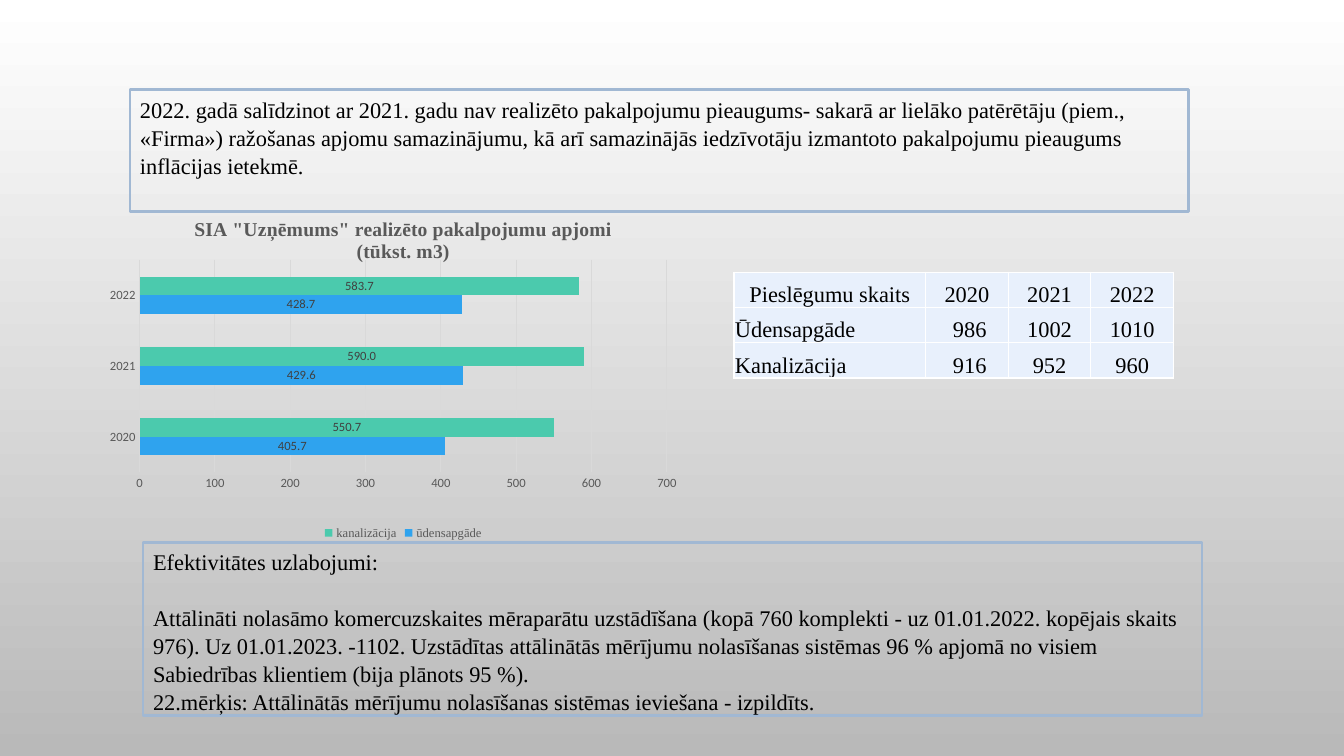
from lxml.etree import SubElement
from pptx import Presentation
from pptx.chart.data import CategoryChartData
from pptx.dml.color import RGBColor
from pptx.enum.chart import XL_CHART_TYPE as ChartType
from pptx.enum.chart import XL_LABEL_POSITION as LabelPosition
from pptx.enum.chart import XL_LEGEND_POSITION as LegendPosition
from pptx.enum.chart import XL_TICK_MARK as TickMark
from pptx.enum.text import MSO_ANCHOR as Anchor
from pptx.enum.text import PP_ALIGN as Align
from pptx.oxml import parse_xml
from pptx.oxml.ns import nsdecls, qn
from pptx.util import Inches, Pt

SERIF, SANS = "Times New Roman", "Calibri"
BLACK, GREY, DARK, PALE = "000000", "595959", "404040", "D9D9D9"
FRAME, CELL, WHITE = "A1B8D3", "E8F0FC", "FFFFFF"

TREND = ["2022. gadā salīdzinot ar 2021. gadu nav realizēto pakalpojumu pieaugums- "
         "sakarā ar lielāko patērētāju (piem., «Firma») ražošanas apjomu samazinājumu, "
         "kā arī samazinājās iedzīvotāju izmantoto pakalpojumu pieaugums inflācijas ietekmē."]
IMPROVEMENTS = [
    "Efektivitātes uzlabojumi:",
    "Attālināti nolasāmo komercuzskaites mēraparātu uzstādīšana (kopā 760 komplekti - uz "
    "01.01.2022. kopējais skaits 976). Uz 01.01.2023. -1102. Uzstādītas attālinātās mērījumu "
    "nolasīšanas sistēmas 96 % apjomā no visiem Sabiedrības klientiem (bija plānots 95 %).",
    "22.mērķis: Attālinātās mērījumu nolasīšanas sistēmas ieviešana - izpildīts."]
CONNECTIONS = [["Pieslēgumu skaits", "2020", "2021", "2022"],
               ["Ūdensapgāde", " 986", "1002", "1010"],
               ["Kanalizācija", " 916", "952", "960"]]
TITLE = ['SIA "Uzņēmums" realizēto pakalpojumu apjomi', "(tūkst. m3)"]
YEARS = ["2020", "2021", "2022"]
SERIES = [("ūdensapgāde", (405.7, 429.6, 428.7), "2FA3EE"),
          ("kanalizācija", (550.7, 590, 583.7), "4BCAAD")]


def grid(*cells):
    """Turn counts of grid cells, ten to the inch, into lengths."""
    return [Inches(count / 10) for count in cells]


def color(code):
    """Make a colour from a hex string."""
    return RGBColor.from_string(code)


def style(font, size=16, name=SERIF, ink=BLACK, bold=False):
    """Format a font."""
    font.size, font.name, font.bold = Pt(size), name, bold
    font.color.rgb = color(ink)


def write(frame, lines, align=Align.LEFT, spacing=None, **format):
    """Write one paragraph for each line of text."""
    for index, line in enumerate(lines):
        para = frame.paragraphs[0] if index == 0 else frame.add_paragraph()
        para.alignment, para.line_spacing = align, spacing
        span = para.add_run()
        span.text = line
        style(span.font, **format)


def paint_background(page):
    """Fill the page with a vertical gradient."""
    fill = page.background.fill
    fill.gradient()
    fill.gradient_angle = 270
    for stop, position, code in zip(fill.gradient_stops, (0, 1), (WHITE, "B9B9B9")):
        stop.position, stop.color.rgb = position, color(code)


def add_framed_text(page, place, lines):
    """Add a text box with a thin frame."""
    box = page.shapes.add_textbox(*grid(*place))
    box.line.color.rgb, box.line.width = color(FRAME), Pt(1.75)
    box.text_frame.word_wrap = True
    write(box.text_frame, lines, spacing=1.05)
    return box


def fill_cell(cell, text, align):
    """Write, fill and border one table cell."""
    cell.vertical_anchor = Anchor.BOTTOM
    cell.margin_left = cell.margin_right = cell.margin_top = Inches(0.01)
    cell.margin_bottom = 0
    write(cell.text_frame, [text], align)
    cell.fill.solid()
    cell.fill.fore_color.rgb = color(CELL)
    props = cell._tc.get_or_add_tcPr()
    for index, side in enumerate("LRTB"):
        props.insert(index, parse_xml(
            f'<a:ln{side} {nsdecls("a")} w="{Pt(1)}"><a:solidFill>'
            f'<a:srgbClr val="{WHITE}"/></a:solidFill></a:ln{side}>'))


def add_connection_table(page, place, rows, widths):
    """Add the table of connection counts."""
    table = page.shapes.add_table(len(rows), len(widths), *grid(*place)).table
    for column, width in zip(table.columns, grid(*widths)):
        column.width = width
    for r, row in enumerate(rows):
        for c, text in enumerate(row):
            align = Align.LEFT if r and not c else Align.CENTER
            fill_cell(table.cell(r, c), text, align)


def set_plot_layout(chart, **shares):
    """Fix the inner plot area as shares of the chart."""
    area = chart.element.find(".//" + qn("c:plotArea"))
    for old in area.findall(qn("c:layout")):
        area.remove(old)
    layout = parse_xml(f'<c:layout {nsdecls("c")}/>')
    area.insert(0, layout)
    manual = SubElement(layout, qn("c:manualLayout"))
    settings = dict(layoutTarget="inner", xMode="edge", yMode="edge", **shares)
    for tag, value in settings.items():
        SubElement(manual, qn("c:" + tag)).set("val", str(value))


def style_axes(chart):
    """Format both axes and the gridlines."""
    category, value = chart.category_axis, chart.value_axis
    for axis in (category, value):
        axis.major_tick_mark = axis.minor_tick_mark = TickMark.NONE
        style(axis.tick_labels.font, 9, SANS, GREY)
    value.minimum_scale, value.maximum_scale, value.major_unit = 0, 700, 100
    value.has_major_gridlines = True
    value.format.line.fill.background()
    for line in (category.format.line, value.major_gridlines.format.line):
        line.color.rgb, line.width = color(PALE), Pt(0.75)


def add_volume_chart(page, place):
    """Add the bar chart of service volumes."""
    data = CategoryChartData()
    data.categories = YEARS
    for name, values, _ in SERIES:
        data.add_series(name, values)
    chart = page.shapes.add_chart(ChartType.BAR_CLUSTERED, *grid(*place), data).chart
    style(chart.font, 10, SANS)
    chart.has_title = True
    write(chart.chart_title.text_frame, TITLE, Align.CENTER, size=14, ink=GREY, bold=True)
    chart.has_legend = True
    chart.legend.position = LegendPosition.BOTTOM
    chart.legend.include_in_layout = False
    style(chart.legend.font, 9, SERIF, GREY)
    style_axes(chart)
    plot = chart.plots[0]
    plot.gap_width, plot.overlap, plot.vary_by_categories = 182, 0, False
    for series, (_, _, code) in zip(plot.series, SERIES):
        series.format.fill.solid()
        series.format.fill.fore_color.rgb = color(code)
        labels = series.data_labels
        labels.show_value, labels.position = True, LabelPosition.CENTER
        labels.number_format, labels.number_format_is_linked = "0.0", False
        style(labels.font, 9, SANS, DARK)
    set_plot_layout(chart, x=0.09, y=0.17, w=0.82, h=0.62)


def main():
    """Build the slide and save it."""
    deck = Presentation()
    deck.slide_width, deck.slide_height = Inches(13.33), Inches(7.5)
    page = deck.slides.add_slide(deck.slide_layouts[6])
    paint_background(page)
    box = add_framed_text(page, (14.2, 53.8, 105, 17.2), IMPROVEMENTS)
    box.text_frame.paragraphs[0].space_after = Pt(19.3)
    add_framed_text(page, (12.9, 8.9, 105, 12.1), TREND)
    add_connection_table(page, (72.8, 27, 43.6, 10.5), CONNECTIONS, (19, 8.2, 8.2, 8.2))
    add_volume_chart(page, (8.1, 20, 63.8, 34))
    deck.save("out.pptx")


if __name__ == "__main__":
    main()
